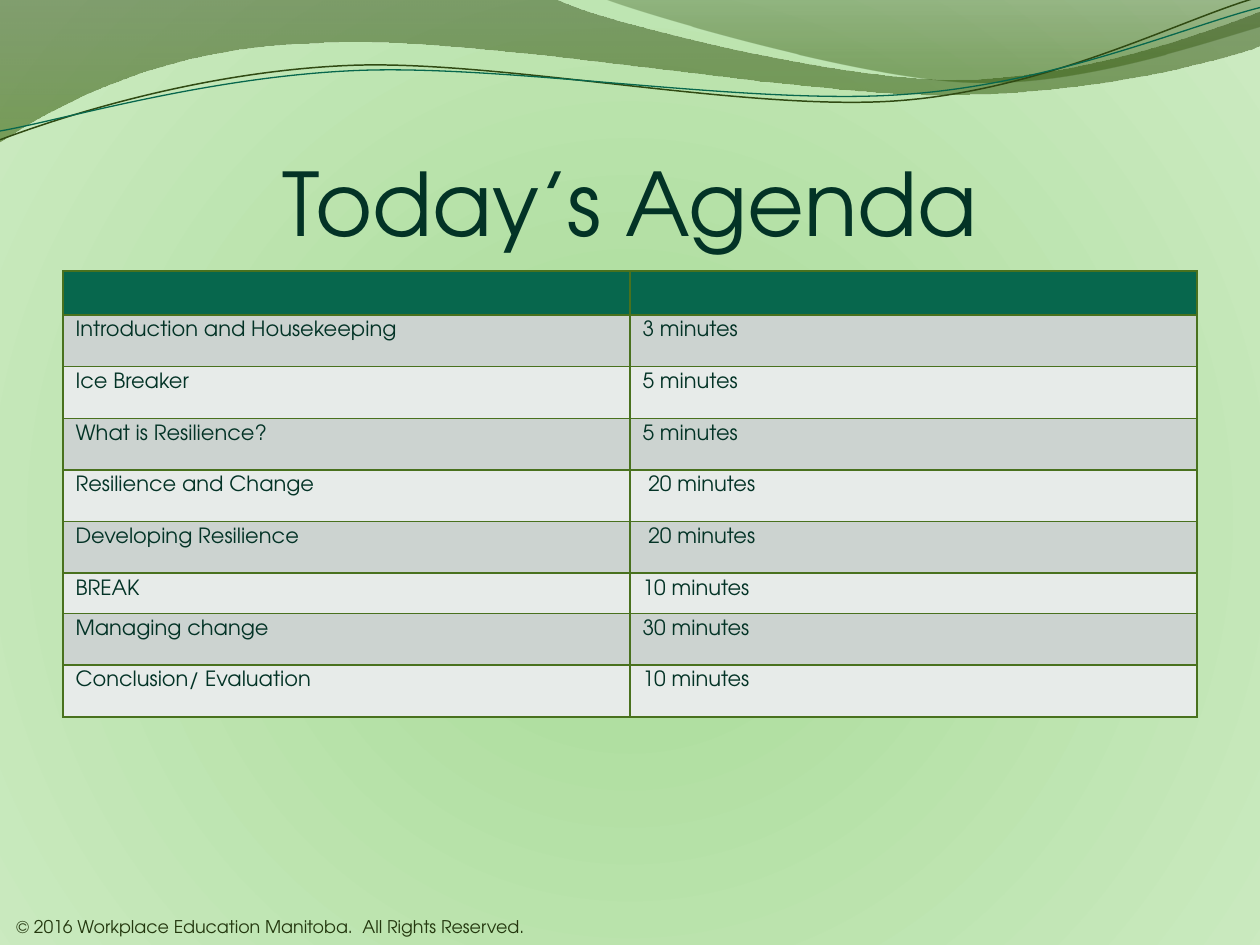
from dataclasses import dataclass

from lxml.etree import SubElement
from pptx import Presentation
from pptx.dml.color import RGBColor
from pptx.enum.text import MSO_ANCHOR, MSO_AUTO_SIZE, PP_ALIGN
from pptx.oxml import parse_xml
from pptx.oxml.ns import nsdecls, qn
from pptx.util import Inches, Pt


@dataclass(frozen=True)
class Theme:
    """Colours, font and type sizes of the slide."""
    font: str = "TeX Gyre Adventor"
    ink: str = "033326"
    foot: str = "24380F"
    head: str = "07674D"
    bands: tuple = ("CCD3D0", "E7EBE9")
    edge: str = "49711E"
    dark: str = "304A13"
    title: int = 50
    cell: int = 12
    small: int = 10


THEME = Theme()
LINEAR = '<a:lin ang="5400000" scaled="0"/>'
RADIAL = ('<a:path path="circle"><a:fillToRect l="10000" t="110000" '
          'r="10000" b="100000"/></a:path>')
BACK = [(0, "55A839", 100), (25, "B0DFA1", 100), (100, "CBEAC0", 100)]

BANDS = [
    ((0, 0), [(4.4, -0.01), (4.76, 0.17, 6.64, 0.63, 7.58, 0.63),
              (8.53, 0.63, 9.58, 0.26, 10, 0.09), (10.01, 0.36),
              (9.83, 0.44, 8.7, 0.76, 7.46, 0.75),
              (6.22, 0.75, 3.82, 0.28, 2.57, 0.34),
              (1.29, 0.36, 0.46, 0.83, -0.01, 1.13)],
     [(0, "28430C", 45), (100, "325C04", 55)]),
    ((4.79, -0.01), [(5.09, 0.11, 6.82, 0.62, 7.69, 0.65),
                     (8.56, 0.69, 9.61, 0.32, 10, 0.21), (10, 0)],
     [(0, "284509", 30), (80, "305508", 45)]),
]
WAVES = [
    ((0, 1.11), [(0.48, 0.93, 1.58, 0.57, 2.77, 0.52),
                 (3.95, 0.47, 5.93, 0.89, 7.13, 0.8),
                 (8.33, 0.71, 9.38, 0.15, 9.98, -0.02)], THEME.dark, 0.85),
    ((0, 1.04), [(0.47, 0.96, 1.64, 0.61, 2.83, 0.56),
                 (4.03, 0.51, 5.97, 0.84, 7.17, 0.75),
                 (8.36, 0.67, 9.41, 0.21, 10, 0.06)], THEME.head, 0.75),
]
AGENDA = [
    ("Introduction and Housekeeping", "3 minutes"),
    ("Ice Breaker", "5 minutes"),
    ("What is Resilience?", "5 minutes"),
    ("Resilience and Change", " 20 minutes"),
    ("Developing Resilience", " 20 minutes"),
    ("BREAK", "10 minutes"),
    ("Managing change", "30 minutes"),
    ("Conclusion/ Evaluation", "10 minutes"),
]


def rgb(code):
    """Turn a hex code into a colour."""
    return RGBColor.from_string(code)


def paint(owner, fill, stops, way):
    """Give a shape or background a gradient with alpha."""
    fill.gradient()
    old = next(owner.element.iter(qn("a:gradFill")))
    marks = "".join(
        f'<a:gs pos="{at * 1000}"><a:srgbClr val="{code}">'
        f'<a:alpha val="{alpha * 1000}"/></a:srgbClr></a:gs>'
        for at, code, alpha in stops)
    new = parse_xml(f'<a:gradFill {nsdecls("a")} rotWithShape="1">'
                    f'<a:gsLst>{marks}</a:gsLst>{way}</a:gradFill>')
    old.getparent().replace(old, new)


def bend(shape, parts):
    """Merge each three lines of a cubic part into one curve."""
    lines = iter(list(shape.element.iter(qn("a:lnTo"))))
    for part in parts:
        first = next(lines)
        if len(part) == 6:
            first.tag = qn("a:cubicBezTo")
            for _ in range(2):
                line = next(lines)
                first.append(line[0])
                line.getparent().remove(line)


def outline(slide, start, parts, close):
    """Draw a curved outline without a shadow."""
    dots = [(Inches(part[i]), Inches(part[i + 1]))
            for part in parts for i in range(0, len(part), 2)]
    pen = slide.shapes.build_freeform(*map(Inches, start))
    pen.add_line_segments(dots, close=close)
    shape = pen.convert_to_shape()
    bend(shape, parts)
    shape.shadow.inherit = False
    return shape


def add_band(slide, start, parts, stops):
    """Add a filled band."""
    shape = outline(slide, start, parts, True)
    paint(shape, shape.fill, stops, LINEAR)
    shape.line.fill.background()


def add_wave(slide, start, parts, code, width):
    """Add an open wavy line."""
    shape = outline(slide, start, parts, False)
    shape.fill.background()
    shape.line.color.rgb = rgb(code)
    shape.line.width = Pt(width)


def write(frame, text, size, code):
    """Put one styled paragraph in a text frame."""
    para = frame.paragraphs[0]
    para.text = text
    para.font.name = THEME.font
    para.font.size = Pt(size)
    para.font.color.rgb = rgb(code)
    return para


def add_title(slide, text):
    """Place and fill the title."""
    title = slide.shapes.title
    title.element.getparent().append(title.element)
    title.left, title.top = Inches(0.5), Inches(0.77)
    title.width, title.height = Inches(9), Inches(1.25)
    frame = title.text_frame
    frame.auto_size = MSO_AUTO_SIZE.NONE
    frame.vertical_anchor = MSO_ANCHOR.BOTTOM
    frame.margin_left = frame.margin_right = frame.margin_bottom = 0
    write(frame, text, THEME.title, THEME.ink).alignment = PP_ALIGN.CENTER


def style(cell, code):
    """Set the borders and fill of a cell."""
    props = cell._tc.get_or_add_tcPr()
    for side in ("a:lnL", "a:lnR", "a:lnT", "a:lnB"):
        line = SubElement(props, qn(side), w=str(Pt(1)))
        solid = SubElement(line, qn("a:solidFill"))
        SubElement(solid, qn("a:srgbClr"), val=THEME.edge)
    cell.fill.solid()
    cell.fill.fore_color.rgb = rgb(code)


def add_agenda(slide):
    """Add the agenda table with its blank header row."""
    high = [0.35] + [0.32 if name == "BREAK" else 0.41 for name, _ in AGENDA]
    table = slide.shapes.add_table(
        len(high), 2, Inches(0.5), Inches(2.15), Inches(9),
        Inches(sum(high))).table
    for row, tall in zip(table.rows, high):
        row.height = Inches(tall)
    for cell in table.rows[0].cells:
        cell.margin_top = cell.margin_bottom = 0
        style(cell, THEME.head)
    for num, texts in enumerate(AGENDA):
        for cell, text in zip(table.rows[num + 1].cells, texts):
            style(cell, THEME.bands[num % 2])
            write(cell.text_frame, text, THEME.cell, THEME.ink)


def add_foot(slide, text):
    """Add the copyright line."""
    box = slide.shapes.add_textbox(
        Inches(0.03), Inches(7.22), Inches(4.3), Inches(0.27))
    box.text_frame.word_wrap = False
    write(box.text_frame, text, THEME.small, THEME.foot)


def main():
    """Build and save the slide."""
    deck = Presentation()
    deck.slide_width, deck.slide_height = Inches(10), Inches(7.5)
    slide = deck.slides.add_slide(deck.slide_layouts[5])
    paint(slide, slide.background.fill, BACK, RADIAL)
    for band in BANDS:
        add_band(slide, *band)
    for wave in WAVES:
        add_wave(slide, *wave)
    add_title(slide, "Today’s Agenda")
    add_agenda(slide)
    add_foot(slide, "© 2016 Workplace Education Manitoba.  "
                    "All Rights Reserved.")
    deck.save("out.pptx")


if __name__ == "__main__":
    main()
